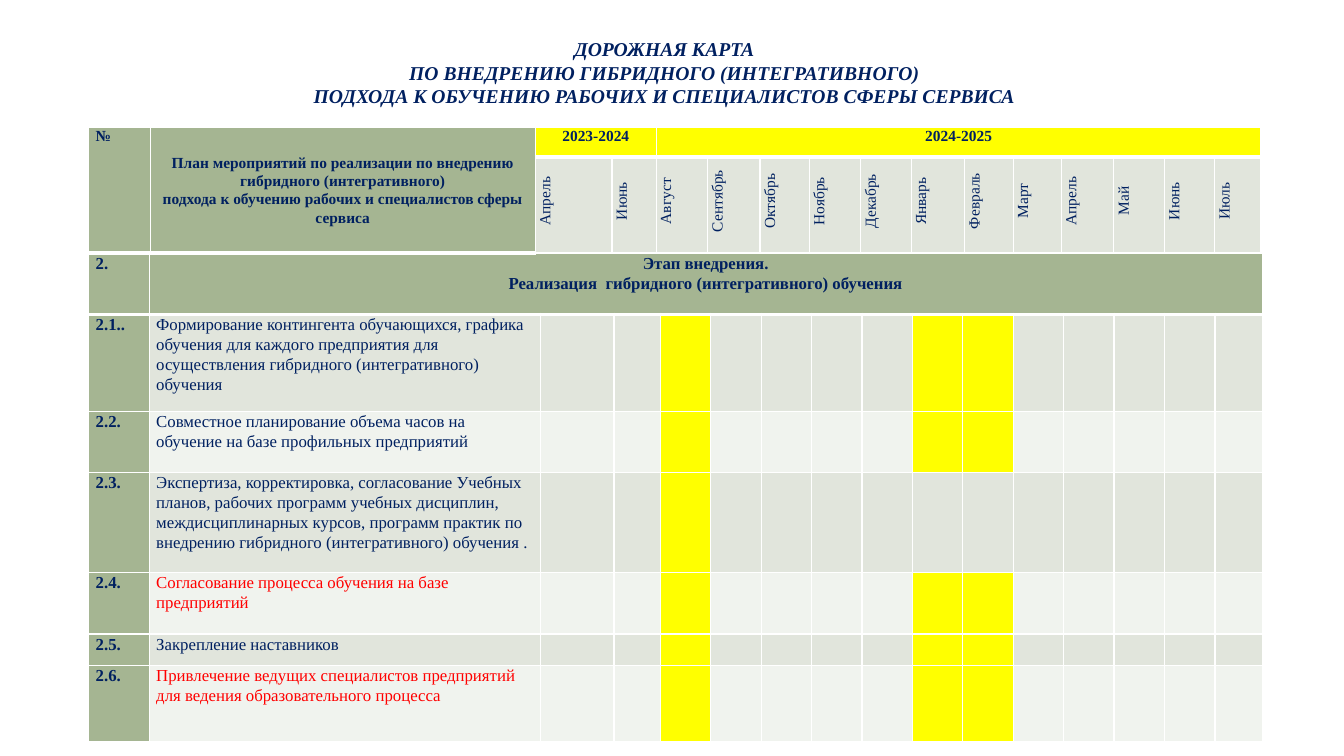
from lxml import etree
from pptx import Presentation
from pptx.dml.color import RGBColor as RGB
from pptx.enum.text import MSO_ANCHOR as ANCHOR, MSO_AUTO_SIZE as AUTO, PP_ALIGN as ALIGN
from pptx.oxml.ns import qn
from pptx.util import Inches, Pt

COLORS = {"navy": "002060", "red": "FF0000", "olive": "A5B592", "yellow": "FFFF00",
          "band": "E1E5DC", "pale": "F0F3EE", "white": "FFFFFF"}
FONT = "Times New Roman"
LEFT = 0.88


def add_grid(s, top, cols, rows):
    """Add a table with the given column widths and row heights."""
    frame = s.shapes.add_table(len(rows), len(cols), Inches(LEFT), Inches(top),
                               Inches(sum(cols)), Inches(sum(rows)))
    table = frame.table
    table.first_row = table.horz_banding = False
    for column, width in zip(table.columns, cols):
        column.width = Inches(width)
    for row, height in zip(table.rows, rows):
        row.height = Inches(height)
    return table


def format_cell(cell, fill, text="", size=12, color="navy", bold=False,
                align=ALIGN.LEFT, bottom=1):
    """Fill a cell, draw its white borders and set its text."""
    cell.fill.solid()
    cell.fill.fore_color.rgb = RGB.from_string(COLORS[fill])
    cell.margin_left = cell.margin_right = Inches(0.07)
    cell.margin_top = cell.margin_bottom = 0
    tcPr = cell._tc.get_or_add_tcPr()
    for i, side in enumerate("LRTB"):
        ln = etree.Element(qn(f"a:ln{side}"), w=str(Pt(bottom if side == "B" else 1)))
        solid = etree.SubElement(ln, qn("a:solidFill"))
        etree.SubElement(solid, qn("a:srgbClr"), val=COLORS["white"])
        tcPr.insert(i, ln)
    if not text:
        return
    cell.text_frame.text = text
    for p in cell.text_frame.paragraphs:
        p.alignment = align
        p.line_spacing = 1.07
        for r in p.runs:
            r.font.name, r.font.size, r.font.bold = FONT, Pt(size), bold
            r.font.color.rgb = RGB.from_string(COLORS[color])


prs = Presentation()
prs.slide_width, prs.slide_height = Inches(13.33), Inches(7.5)
s = prs.slides.add_slide(prs.slide_layouts[5])

# Title
title = s.shapes.title
title.left, title.top, title.width, title.height = map(Inches, (1, 0.32, 11.18, 0.81))
tf = title.text_frame
tf.text = ("ДОРОЖНАЯ КАРТА\nПО ВНЕДРЕНИЮ ГИБРИДНОГО (ИНТЕГРАТИВНОГО)\n"
           "ПОДХОДА К ОБУЧЕНИЮ РАБОЧИХ И СПЕЦИАЛИСТОВ СФЕРЫ СЕРВИСА")
tf.auto_size, tf.vertical_anchor, tf.word_wrap = AUTO.NONE, ANCHOR.TOP, True
for p in tf.paragraphs:
    p.alignment = ALIGN.CENTER
    for r in p.runs:
        r.font.name, r.font.size, r.font.bold, r.font.italic = FONT, Pt(14), True, True
        r.font.color.rgb = RGB.from_string(COLORS["navy"])

# Stage table: number, activity and 14 months
stage = add_grid(s, 2.51, [0.6, 3.88, 0.73, 0.46] + [0.5] * 11 + [0.47],
                 [0.61, 0.96, 0.61, 0.99, 0.61, 0.31, 0.76])
stage.cell(0, 1).merge(stage.cell(0, 15))
format_cell(stage.cell(0, 0), "olive", "2.", bold=True, bottom=3)
format_cell(stage.cell(0, 1), "olive",
            "Этап внедрения.\nРеализация  гибридного (интегративного) обучения",
            bold=True, align=ALIGN.CENTER, bottom=3)
for col in range(2, 16):
    format_cell(stage.cell(0, col), "olive", bottom=3)

AUGUST, JANUARY, FEBRUARY = 4, 9, 10
ALL = (AUGUST, JANUARY, FEBRUARY)
activities = [
    ("2.1..", "Формирование контингента обучающихся, графика обучения для каждого "
     "предприятия для осуществления гибридного (интегративного) обучения", "navy", ALL),
    ("2.2.", "Совместное планирование объема часов на обучение на базе профильных "
     "предприятий", "navy", ALL),
    ("2.3.", "Экспертиза, корректировка, согласование Учебных планов, рабочих программ "
     "учебных дисциплин, междисциплинарных курсов, программ практик по внедрению "
     "гибридного (интегративного) обучения .", "navy", (AUGUST,)),
    ("2.4.", "Согласование процесса обучения на базе предприятий", "red", ALL),
    ("2.5.", "Закрепление наставников", "navy", ALL),
    ("2.6.", "Привлечение ведущих специалистов предприятий для ведения "
     "образовательного процесса", "red", ALL),
]
for row, (number, activity, color, active) in enumerate(activities, 1):
    shade = "band" if row % 2 else "pale"
    format_cell(stage.cell(row, 0), "olive", number, bold=True)
    format_cell(stage.cell(row, 1), shade, activity, color=color)
    for col in range(2, 16):
        format_cell(stage.cell(row, col), "yellow" if col in active else shade)

# Header table: school years above months
header = add_grid(s, 1.26, [0.61, 3.82, 0.76, 0.44, 0.51, 0.52, 0.49, 0.51, 0.5, 0.53,
                            0.48, 0.48, 0.52, 0.5, 0.5, 0.46], [0.3, 0.95])
headings = [
    (0, (1, 0), "olive", "№", ALIGN.LEFT),
    (1, (1, 1), "olive", "План мероприятий по реализации по внедрению гибридного "
     "(интегративного)\nподхода к обучению рабочих и специалистов сферы сервиса",
     ALIGN.CENTER),
    (2, (0, 3), "yellow", "2023-2024", ALIGN.CENTER),
    (4, (0, 15), "yellow", "2024-2025", ALIGN.CENTER),
]
for col, (last_row, last_col), fill, text, align in headings:
    header.cell(0, col).merge(header.cell(last_row, last_col))
    for row in range(last_row + 1):
        for c in range(col, last_col + 1):
            shown = text if (row, c) == (0, col) else ""
            format_cell(header.cell(row, c), fill, shown, 11, bold=True,
                        align=align, bottom=3)
header.cell(0, 1).vertical_anchor = ANCHOR.MIDDLE

months = ("Апрель Июнь Август Сентябрь Октябрь Ноябрь Декабрь Январь Февраль "
          "Март Апрель Май Июнь Июль").split()
for col, month in enumerate(months, 2):
    cell = header.cell(1, col)
    format_cell(cell, "band", month, 11, align=ALIGN.CENTER)
    cell._tc.get_or_add_tcPr().set("vert", "vert270")
    pPr = cell.text_frame.paragraphs[0]._p.get_or_add_pPr()
    pPr.set("marL", str(Inches(0.08)))

prs.save("out.pptx")
